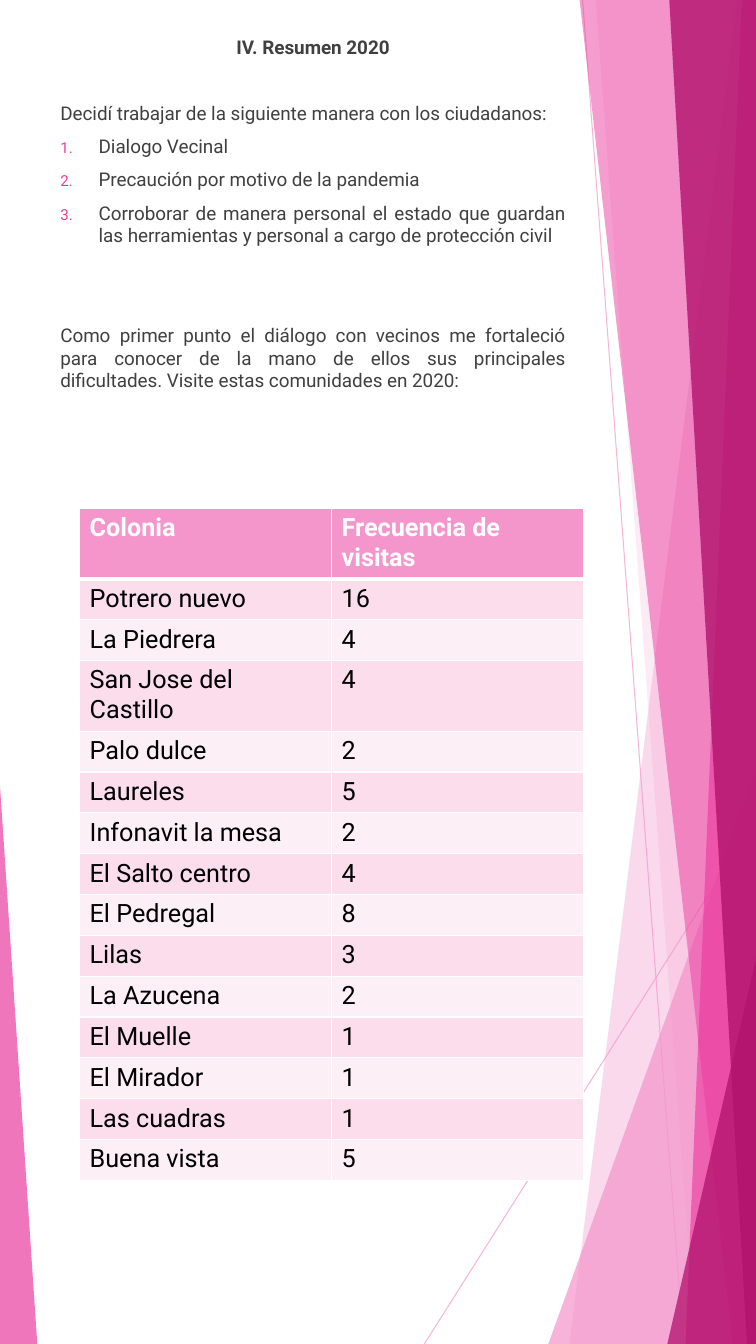
from lxml import etree
from pptx import Presentation
from pptx.dml.color import RGBColor
from pptx.enum.shapes import MSO_CONNECTOR
from pptx.enum.text import MSO_ANCHOR, MSO_AUTO_SIZE, PP_ALIGN
from pptx.oxml.ns import qn
from pptx.util import Inches, Pt

STRAIGHT = MSO_CONNECTOR.STRAIGHT
TOP = MSO_ANCHOR.TOP
FIXED = MSO_AUTO_SIZE.NONE
CENTER, LEFT, JUSTIFY = PP_ALIGN.CENTER, PP_ALIGN.LEFT, PP_ALIGN.JUSTIFY

WHITE = RGBColor(0xFF, 0xFF, 0xFF)
BLACK = RGBColor(0x00, 0x00, 0x00)
GRAY = RGBColor(0x40, 0x40, 0x40)
PINK = RGBColor(0xF4, 0x96, 0xCB)
ROSE = RGBColor(0xEB, 0x3D, 0x9F)
WINE = RGBColor(0xB2, 0x13, 0x6D)
BLUSH = RGBColor(0xFB, 0xDD, 0xEC)
PALE = RGBColor(0xFD, 0xEF, 0xF6)

TITLE = "IV. Resumen 2020"
INTRO = "Decidí trabajar de la siguiente manera con los ciudadanos:"
STEPS = [
    "Dialogo Vecinal",
    "Precaución por motivo de la pandemia",
    "Corroborar de manera personal el estado que guardan las herramientas"
    " y personal a cargo de protección civil",
]
STORY = (
    "Como primer punto el diálogo con vecinos me fortaleció para conocer de la"
    " mano de ellos sus principales dificultades. Visite estas comunidades en 2020:"
)
VISITS = [
    ("Colonia", "Frecuencia de visitas"),
    ("Potrero nuevo", 16),
    ("La Piedrera", 4),
    ("San Jose del Castillo", 4),
    ("Palo dulce", 2),
    ("Laureles", 5),
    ("Infonavit la mesa", 2),
    ("El Salto centro", 4),
    ("El Pedregal", 8),
    ("Lilas", 3),
    ("La Azucena", 2),
    ("El Muelle", 1),
    ("El Mirador", 1),
    ("Las cuadras", 1),
    ("Buena vista", 5),
]


def band(top, base):
    return [(top, 0), (base, 100), (100, 100), (100, 0)]


def wedge(foot, edge, rise):
    return [(foot, 100), (edge, rise), (edge, 100)]


RAYS = [((56.13, 100), (100, 60.98)), ((77.07, 0), (90.4, 100))]
PANES = [
    (band(97.47, 75.33), PINK, 36),
    (band(78.8, 92), PINK, 20),
    (wedge(72.53, 100, 57.16), PINK, 72),
    (band(76.67, 96.93), ROSE, 50),
    (band(98.13, 90.67), ROSE, 66),
    (band(88.53, 98.8), WINE, 80),
    (wedge(88.27, 100, 71.34), WINE, 76),
    (wedge(4.93, 0, 58.51), ROSE, 70),
]


def node(base, tag, **attrs):
    return etree.SubElement(base, qn(tag), attrs)


class Page:
    font = "Roboto"
    size = Pt(13.5)
    gap = Pt(7.5)

    def __init__(self, deck):
        self.wide, self.high = deck.slide_width, deck.slide_height
        self.slide = deck.slides.add_slide(deck.slide_layouts[5])
        self.shapes = self.slide.shapes

    def spot(self, x, y):
        return round(self.wide * x / 100), round(self.high * y / 100)

    def fade(self, shape, alpha):
        tint = next(shape._element.spPr.iter(qn("a:srgbClr")))
        node(tint, "a:alpha", val=str(alpha * 1000))

    def ray(self, start, end):
        line = self.shapes.add_connector(STRAIGHT, *self.spot(*start), *self.spot(*end))
        line.line.color.rgb = PINK
        line.line.width = Pt(0.75)
        self.fade(line, 70)
        node(line._element.spPr, "a:effectLst")

    def pane(self, points, color, alpha):
        first, *rest = [self.spot(*point) for point in points]
        form = self.shapes.build_freeform(*first)
        form.add_line_segments(rest)
        shape = form.convert_to_shape()
        shape.shadow.inherit = False
        shape.fill.solid()
        shape.fill.fore_color.rgb = color
        shape.line.fill.background()
        self.fade(shape, alpha)

    def style(self, par, size, color, align, bold=False):
        par.alignment = align
        for run in par.runs:
            run.font.name = self.font
            run.font.size = size
            run.font.bold = bold
            run.font.color.rgb = color

    def title(self, text, x, y, w, h):
        box = self.shapes.title
        box.left, box.top = self.spot(x, y)
        box.width, box.height = self.spot(w, h)
        frame = box.text_frame
        frame.text = text
        frame.auto_size = FIXED
        frame.vertical_anchor = TOP
        self.style(frame.paragraphs[0], self.size, GRAY, CENTER, True)

    def text(self, lines, x, y, w, h):
        box = self.shapes.add_textbox(*self.spot(x, y), *self.spot(w, h))
        frame = box.text_frame
        frame.word_wrap = True
        frame.text = "\n".join(lines)
        for i, par in enumerate(frame.paragraphs):
            self.style(par, self.size, GRAY, JUSTIFY)
            if i:
                par.space_before = self.gap
                self.number(par)

    def number(self, par):
        prop = par._p.get_or_add_pPr()
        dent = Inches(0.38)
        prop.set("marL", str(dent))
        prop.set("indent", str(-dent))
        node(node(prop, "a:buClr"), "a:srgbClr", val=str(ROSE))
        node(prop, "a:buSzPct", val="80000")
        node(prop, "a:buFont", typeface=self.font)
        node(prop, "a:buAutoNum", type="arabicPeriod")

    def edges(self, cell, **widths):
        prop = cell._tc.get_or_add_tcPr()
        for side in "LRTB":
            line = node(prop, f"a:ln{side}", w=str(Pt(widths.get(side, 1))))
            node(node(line, "a:solidFill"), "a:srgbClr", val=str(WHITE))

    def table(self, data, x, y, w, h):
        place = *self.spot(x, y), *self.spot(w, h)
        grid = self.shapes.add_table(len(data), len(data[0]), *place).table
        for r, row in enumerate(data):
            head = r == 0
            fill = PINK if head else (PALE, BLUSH)[r % 2]
            thick = {0: {"B": 3}, 1: {"T": 3}}.get(r, {})
            for c, value in enumerate(row):
                cell = grid.cell(r, c)
                self.edges(cell, **thick)
                cell.fill.solid()
                cell.fill.fore_color.rgb = fill
                cell.text_frame.text = str(value)
                color = WHITE if head else BLACK
                self.style(cell.text_frame.paragraphs[0], Pt(18), color, LEFT, head)


def main():
    deck = Presentation()
    deck.slide_width, deck.slide_height = Inches(7.5), Inches(13.33)
    page = Page(deck)
    for ray in RAYS:
        page.ray(*ray)
    for pane in PANES:
        page.pane(*pane)
    page.title(TITLE, 6.67, 2.25, 69.47, 2.4)
    page.text([INTRO, *STEPS], 6.67, 7.2, 69.47, 11.6)
    page.text([STORY], 6.67, 23.71, 69.47, 6)
    page.table(VISITS, 10.53, 37.81, 66.67, 45.61)
    deck.save("out.pptx")


if __name__ == "__main__":
    main()
